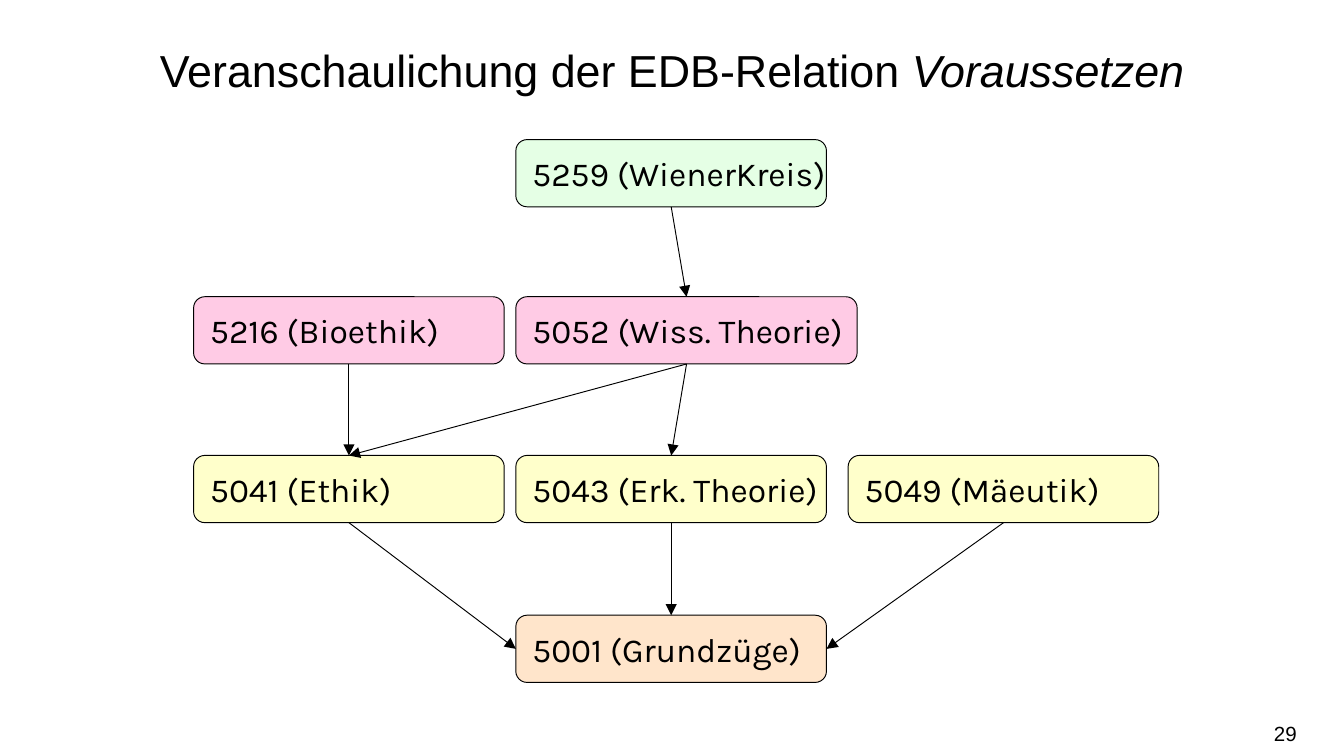
from lxml import etree
from pptx import Presentation
from pptx.dml.color import RGBColor
from pptx.enum.shapes import MSO_CONNECTOR as CONN, MSO_SHAPE as SHAPE
from pptx.enum.text import MSO_ANCHOR as ANCHOR, PP_ALIGN as ALIGN
from pptx.oxml.ns import qn
from pptx.util import Cm, Pt

COLORS = {
    "black": "000000",
    "green": "CCFFCC",
    "pink": "FF99CC",
    "yellow": "FFFF99",
    "orange": "FFCC99",
}

# Grid of the course boxes, in cm
COLS = (3.66, 9.75, 16.03)
ROWS = (2.64, 5.61, 8.61, 11.63)
BOX_W, WIDE_W, BOX_H = 5.87, 6.45, 1.27

# Connection sites of a box
TOP, LEFT, BOTTOM, RIGHT = range(4)

# Number, name, column, row, colour, width
COURSES = (
    (5259, "WienerKreis", 1, 0, "green", BOX_W),
    (5052, "Wiss. Theorie", 1, 1, "pink", WIDE_W),
    (5043, "Erk. Theorie", 1, 2, "yellow", BOX_W),
    (5001, "Grundzüge", 1, 3, "orange", BOX_W),
    (5049, "Mäeutik", 2, 2, "yellow", BOX_W),
    (5041, "Ethik", 0, 2, "yellow", BOX_W),
    (5216, "Bioethik", 0, 1, "pink", BOX_W),
)

# Arrows leave at the bottom; the last value is the site they reach
ARROWS = (
    (5216, 5041, TOP),
    (5052, 5041, TOP),
    (5043, 5001, TOP),
    (5052, 5043, TOP),
    (5259, 5052, TOP),
    (5049, 5001, RIGHT),
    (5041, 5001, LEFT),
)


def rgb(name):
    return RGBColor.from_string(COLORS[name])


def format_runs(p, size, font):
    for r in p.runs:
        r.font.size = Pt(size)
        r.font.name = font
        r.font.color.rgb = rgb("black")


def set_line(line):
    line.color.rgb = rgb("black")
    line.width = Pt(0.5)


def add_text(s, x, y, w, h, text, size, align):
    tf = s.shapes.add_textbox(Cm(x), Cm(y), Cm(w), Cm(h)).text_frame
    tf.word_wrap = True
    tf.vertical_anchor = ANCHOR.MIDDLE
    tf.text = text
    p = tf.paragraphs[0]
    p.alignment = align
    format_runs(p, size, "Arial")
    return tf


def add_title(s, text, emphasis):
    tf = add_text(s, 0, 0, 25.4, 2.39, text, 24, ALIGN.CENTER)
    p = tf.paragraphs[0]
    p.line_spacing = 1.25
    r = p.add_run()
    r.text = emphasis
    r.font.italic = True
    format_runs(p, 24, "Arial")


def add_course(s, number, name, col, row, color, width):
    sp = s.shapes.add_shape(SHAPE.FLOWCHART_ALTERNATE_PROCESS, Cm(COLS[col]),
                            Cm(ROWS[row]), Cm(width), Cm(BOX_H))
    sp.shadow.inherit = False
    sp.fill.solid()
    sp.fill.fore_color.rgb = rgb(color)
    # Half transparent fill
    clr = sp.fill._xPr.find(qn("a:solidFill"))[0]
    etree.SubElement(clr, qn("a:alpha"), val="50000")
    set_line(sp.line)

    tf = sp.text_frame
    tf.word_wrap = False
    tf.vertical_anchor = ANCHOR.MIDDLE
    tf.text = f"{number} ({name})"
    p = tf.paragraphs[0]
    p.alignment = ALIGN.LEFT
    format_runs(p, 18, "Karla")
    return sp


def add_arrow(s, start, end, site):
    cx = s.shapes.add_connector(CONN.STRAIGHT, 0, 0, 0, 0)
    cx.begin_connect(start, BOTTOM)
    cx.end_connect(end, site)
    set_line(cx.line)
    etree.SubElement(cx.line._get_or_add_ln(), qn("a:tailEnd"), type="triangle")
    etree.SubElement(cx._element.spPr, qn("a:effectLst"))


def main():
    prs = Presentation()
    prs.slide_width, prs.slide_height = Cm(25.4), Cm(14.29)
    s = prs.slides.add_slide(prs.slide_layouts[6])

    # Title
    add_title(s, "Veranschaulichung der EDB-Relation ", "Voraussetzen")

    # Courses and their prerequisites
    boxes = {course[0]: add_course(s, *course) for course in COURSES}
    for start, end, site in ARROWS:
        add_arrow(s, boxes[start], boxes[end], site)

    # Page number
    tf = add_text(s, 18.82, 13.49, 5.69, 0.76, "29", 11, ALIGN.RIGHT)
    tf.margin_left = tf.margin_right = 0

    prs.save("out.pptx")


if __name__ == "__main__":
    main()
